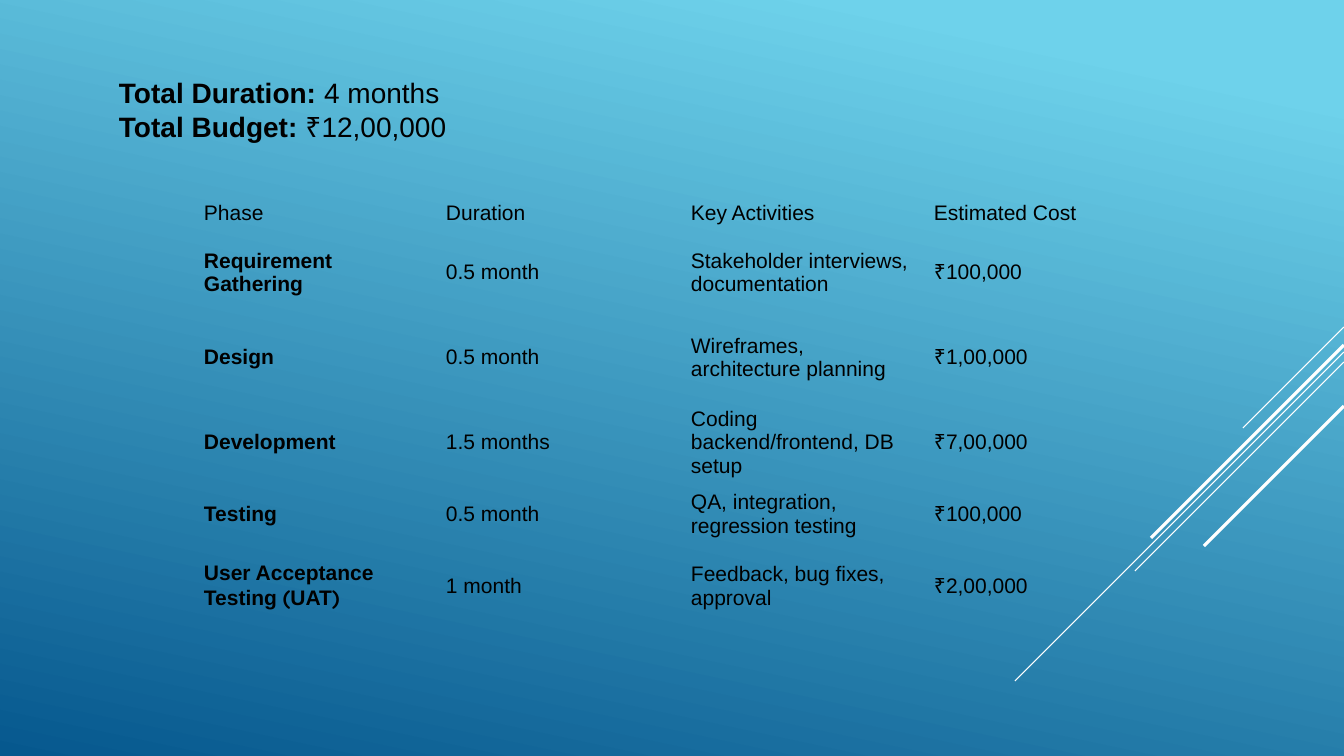
from lxml import etree
from pptx import Presentation
from pptx import util as u
from pptx.dml.color import RGBColor
from pptx.enum import shapes, text
from pptx.oxml.ns import qn

# Content
COLORS = {"text": "000000", "line": "FFFFFF", "sky": "6ED2EB", "deep": "06588E"}
FONT, BRACKET_FONT = "Arial", "Quicksand"
TOTALS = [("Total Duration:", " 4 months"), ("Total Budget:", " ₹12,00,000")]
HEADER = ("Phase", "Duration", "Key Activities", "Estimated Cost")
PHASES = [
    ("Requirement Gathering", "0.5 month", "Stakeholder interviews, documentation", "₹100,000"),
    ("Design", "0.5 month", "Wireframes, architecture planning", "₹1,00,000"),
    ("Development", "1.5 months", "Coding backend/frontend, DB setup", "₹7,00,000"),
    ("Testing", "0.5 month", "QA, integration, regression testing", "₹100,000"),
    ("User Acceptance Testing (UAT)", "1 month", "Feedback, bug fixes, approval", "₹2,00,000"),
]

# Layout in px
WIDTH, HEIGHT = 1344, 756
TOTALS_BOX = (109, 71, 653, 78)
TABLE_AT = (196, 196)
COLUMNS = (242, 245, 243, 244)
ROWS = (34, 85, 85, 85, 59, 85)
# Diagonals from the right edge: start y, run to the lower left, weight in points
DIAGONALS = [(327, 101, 0.75), (352, 329, 0.75), (362, 209, 0.75),
             (345, 193, 2.25), (406, 140, 2.25)]


def px(length):
    return u.Emu(round(length * 914400 / 100.8))


def rgb(name):
    return RGBColor.from_string(COLORS[name])


def write(para, words, size, bold=False, font=FONT):
    span = para.add_run()
    span.text = words
    span.font.size = u.Pt(size)
    span.font.bold = bold
    span.font.name = font
    span.font.color.rgb = rgb("text")


def clear_cell(cell):
    props = cell._tc.get_or_add_tcPr()
    for side in ("lnL", "lnR", "lnT", "lnB"):
        border = etree.SubElement(props, qn(f"a:{side}"), w="0")
        etree.SubElement(border, qn("a:noFill"))
    cell.fill.background()
    cell.vertical_anchor = text.MSO_ANCHOR.MIDDLE
    cell.margin_left = cell.margin_right = px(8)
    cell.margin_top = cell.margin_bottom = px(4)


deck = Presentation()
deck.slide_width, deck.slide_height = px(WIDTH), px(HEIGHT)
page = deck.slides.add_slide(deck.slide_layouts[6])

# Background gradient (angle counts counter-clockwise)
fill = page.background.fill
fill.gradient()
fill.gradient_angle = 360 - 102
for stop, position, name in zip(fill.gradient_stops, (0.1, 1), ("sky", "deep")):
    stop.position = position
    stop.color.rgb = rgb(name)

# Diagonal lines
for top, run, weight in DIAGONALS:
    diagonal = page.shapes.add_connector(
        shapes.MSO_CONNECTOR.STRAIGHT, px(WIDTH), px(top), px(WIDTH - run), px(top + run))
    diagonal.line.color.rgb = rgb("line")
    diagonal.line.width = u.Pt(weight)
    etree.SubElement(diagonal._element.spPr, qn("a:effectLst"))

# Totals
box = page.shapes.add_textbox(*map(px, TOTALS_BOX))
box.text_frame.word_wrap = True
para = box.text_frame.paragraphs[0]
for index, (label, value) in enumerate(TOTALS):
    if index:
        para.add_line_break()
    write(para, label, 20, bold=True)
    write(para, value, 20)

# Phase table
table = page.shapes.add_table(
    len(ROWS), len(COLUMNS), *map(px, TABLE_AT), px(sum(COLUMNS)), px(sum(ROWS))).table
table.first_row = table.horz_banding = False
for column, width in zip(table.columns, COLUMNS):
    column.width = px(width)
for row, height in zip(table.rows, ROWS):
    row.height = px(height)
for r, record in enumerate([HEADER] + PHASES):
    for c, words in enumerate(record):
        cell = table.cell(r, c)
        clear_cell(cell)
        para = cell.text_frame.paragraphs[0]
        bold = r > 0 and c == 0
        name, opening, rest = words.partition(" (")
        write(para, name, 15, bold=bold)
        if opening:
            write(para, opening, 15, bold=bold, font=BRACKET_FONT)
            write(para, rest[:-1], 15, bold=bold)
            write(para, rest[-1], 15, bold=bold, font=BRACKET_FONT)

deck.save("out.pptx")
